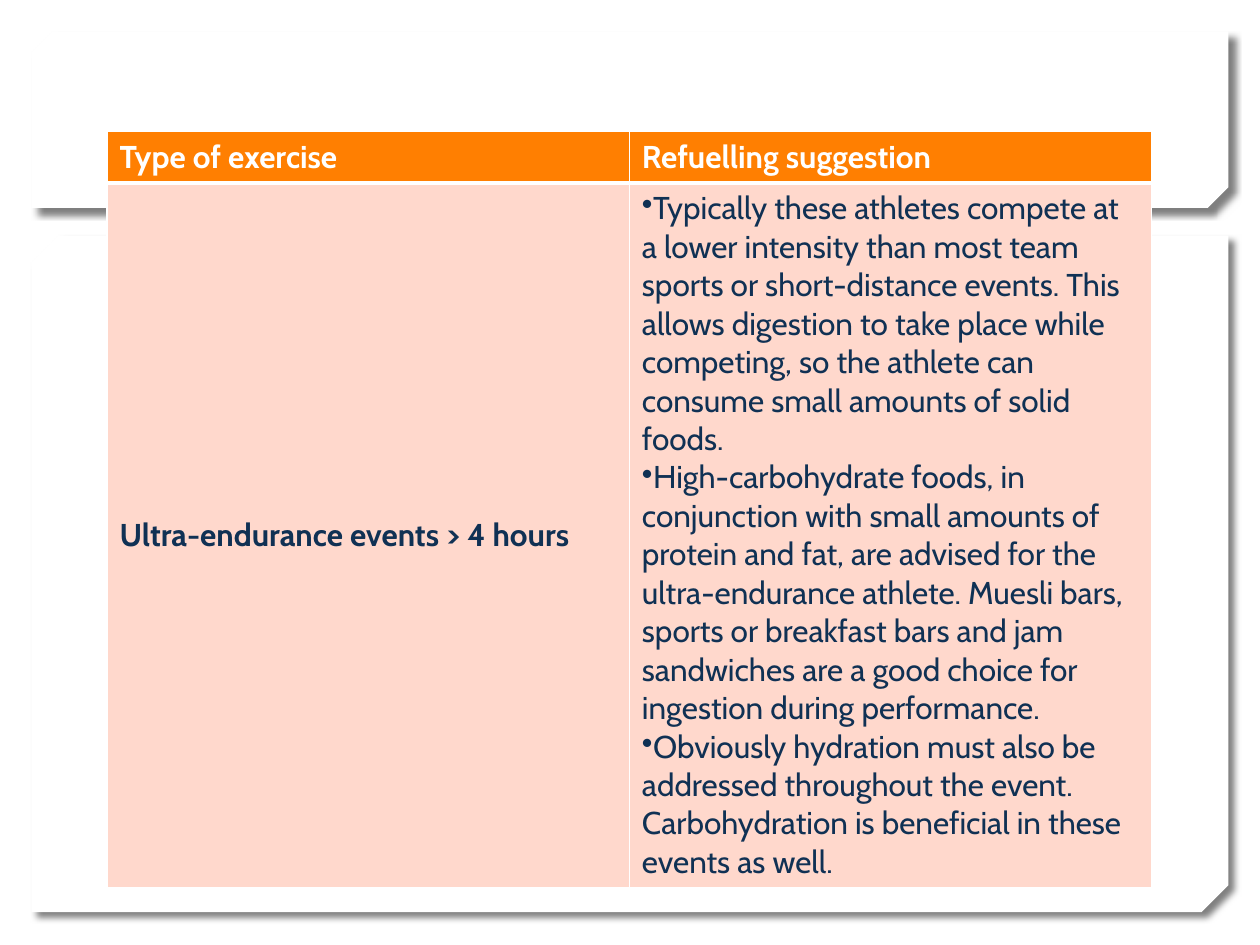
from pptx import Presentation
from pptx import util as u
from pptx.dml.color import RGBColor
from pptx.enum import shapes, text
from pptx.oxml import parse_xml
from pptx.oxml.ns import nsdecls

THEME = {
    "font": "Cabin", "size": u.Pt(18),
    "paper": "FFFFFF", "header": "FF7F01", "body": "FFD8CC",
    "ink": "103154", "shadow": "000000",
}

deck = Presentation()
deck.slide_width, deck.slide_height = u.Inches(10), u.Inches(7.5)
W, H = deck.slide_width, deck.slide_height
slide = deck.slides.add_slide(deck.slide_layouts[6])


def add_border(cell, side, points):
    cell._tc.get_or_add_tcPr().append(parse_xml(
        f'<a:{side} {nsdecls("a")} w="{u.Pt(points)}"><a:solidFill>'
        f'<a:srgbClr val="{THEME["paper"]}"/></a:solidFill></a:{side}>'))


# Two paper panels with a snipped corner and a soft shadow
margin = W * 0.025
for top, height, snip in ((1.87, 5.37, 0.04), (0.25, 1.4, 0.117)):
    panel = slide.shapes.add_shape(
        shapes.MSO_SHAPE.SNIP_2_DIAG_RECTANGLE,
        int(margin), int(H * top / 7.5), int(W - 2 * margin), int(H * height / 7.5))
    panel.adjustments[0], panel.adjustments[1] = snip, 0
    panel.fill.solid()
    panel.fill.fore_color.rgb = RGBColor.from_string(THEME["paper"])
    panel.line.fill.background()
    panel.shadow.inherit = False
    panel._element.spPr.find("{*}effectLst").append(parse_xml(
        f'<a:outerShdw {nsdecls("a")} blurRad="{u.Pt(4)}" dist="{u.Pt(5)}" '
        'dir="2700000" algn="tl" rotWithShape="0">'
        f'<a:srgbClr val="{THEME["shadow"]}"><a:alpha val="50000"/></a:srgbClr>'
        '</a:outerShdw>'))

# Wording: each cell is a list of paragraphs
advice = [
    "Typically these athletes compete at a lower intensity than most team sports "
    "or short-distance events. This allows digestion to take place while competing, "
    "so the athlete can consume small amounts of solid foods.",
    "High-carbohydrate foods, in conjunction with small amounts of protein and fat, "
    "are advised for the ultra-endurance athlete. Muesli bars, sports or breakfast "
    "bars and jam sandwiches are a good choice for ingestion during performance.",
    "Obviously hydration must also be addressed throughout the event. "
    "Carbohydration is beneficial in these events as well.",
]
rows = [
    [["Type of exercise"], ["Refuelling suggestion"]],
    [["Ultra-endurance events > 4 hours"], advice],
]

# Refuelling table: two equal columns
refuelling = slide.shapes.add_table(
    2, 2, int(W * 0.085), int(H * 0.139), int(W * 0.829), int(H * 0.788)).table
refuelling.horz_banding = False
refuelling.rows[0].height = u.Inches(0.41)
refuelling.rows[1].height = u.Inches(5.5)

for r, row in enumerate(rows):
    is_header = r == 0
    for c, paragraphs in enumerate(row):
        cell = refuelling.cell(r, c)
        is_advice = paragraphs is advice
        if not is_header:
            cell.vertical_anchor = text.MSO_ANCHOR.MIDDLE
        # Borders come before the fill in the cell properties
        for side in ("lnL", "lnR", "lnT", "lnB"):
            heavy = (is_header and side == "lnB") or (not is_header and side == "lnT")
            add_border(cell, side, 3 if heavy else 1)
        cell.fill.solid()
        cell.fill.fore_color.rgb = RGBColor.from_string(
            THEME["header" if is_header else "body"])

        for i, words in enumerate(paragraphs):
            frame = cell.text_frame
            para = frame.paragraphs[0] if i == 0 else frame.add_paragraph()
            if is_advice:
                para._p.get_or_add_pPr().append(
                    parse_xml(f'<a:buChar {nsdecls("a")} char="•"/>'))
            run = para.add_run()
            run.text = words
            run.font.name, run.font.size = THEME["font"], THEME["size"]
            run.font.bold = not is_advice
            run.font.color.rgb = RGBColor.from_string(
                THEME["paper" if is_header else "ink"])

deck.save("out.pptx")
